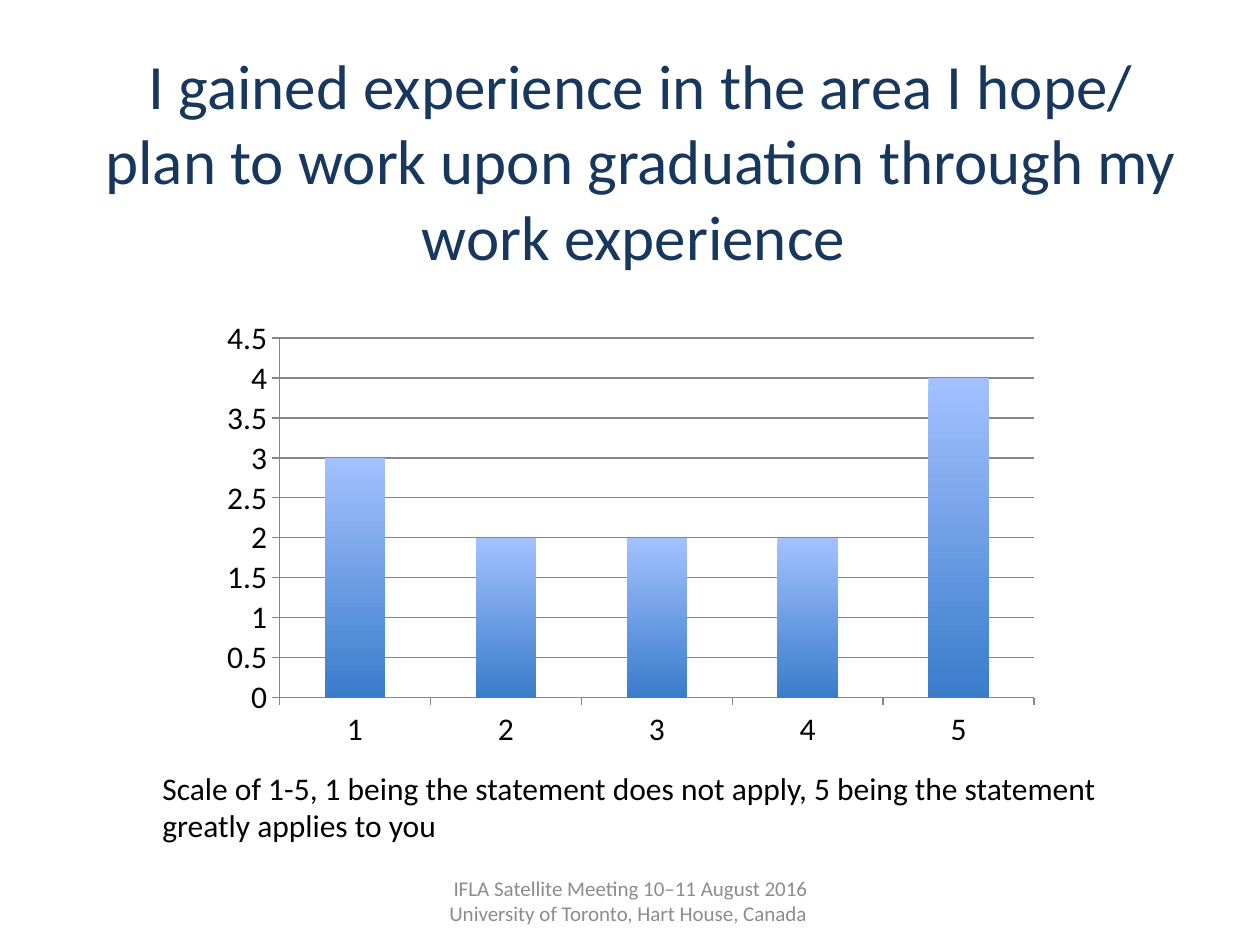
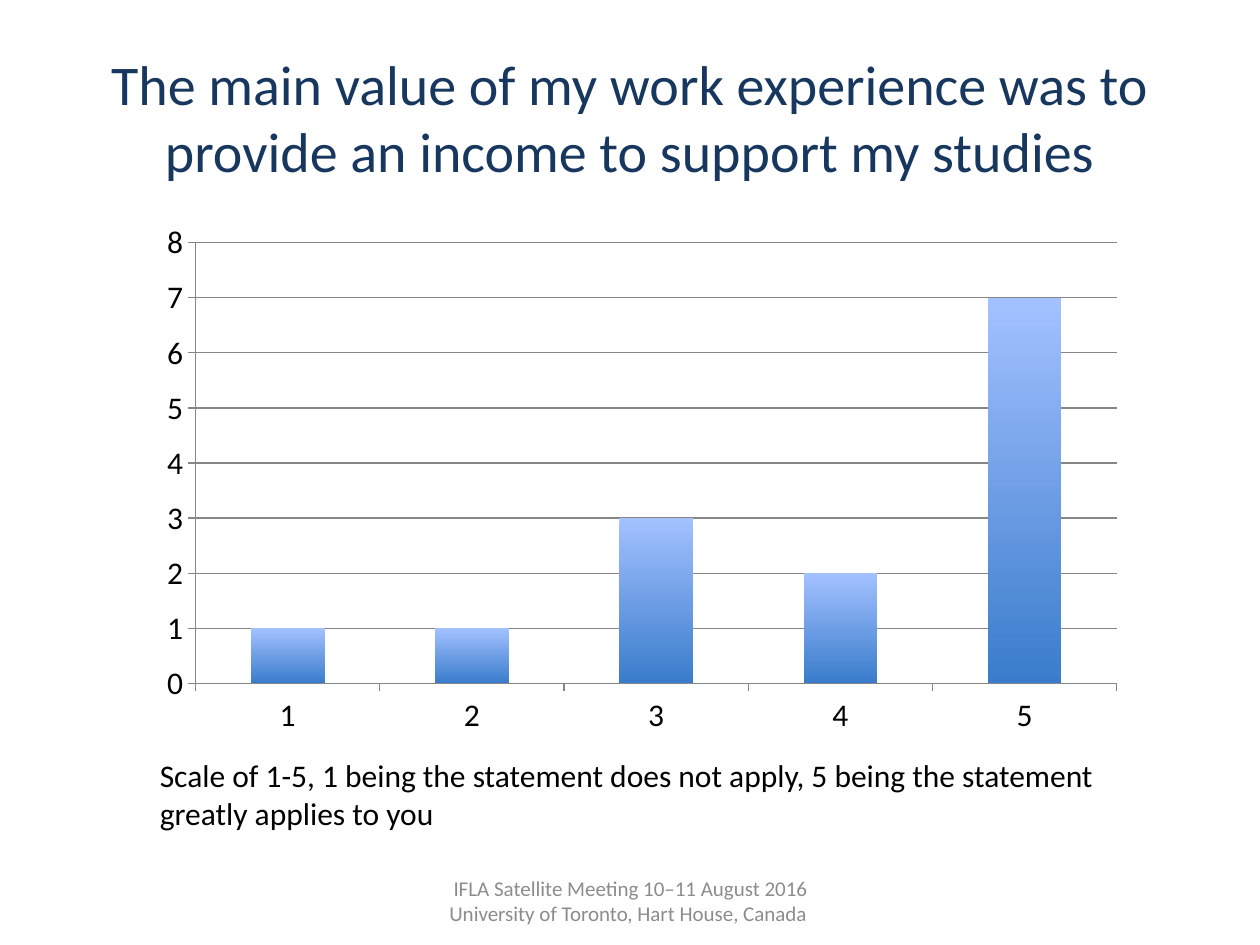
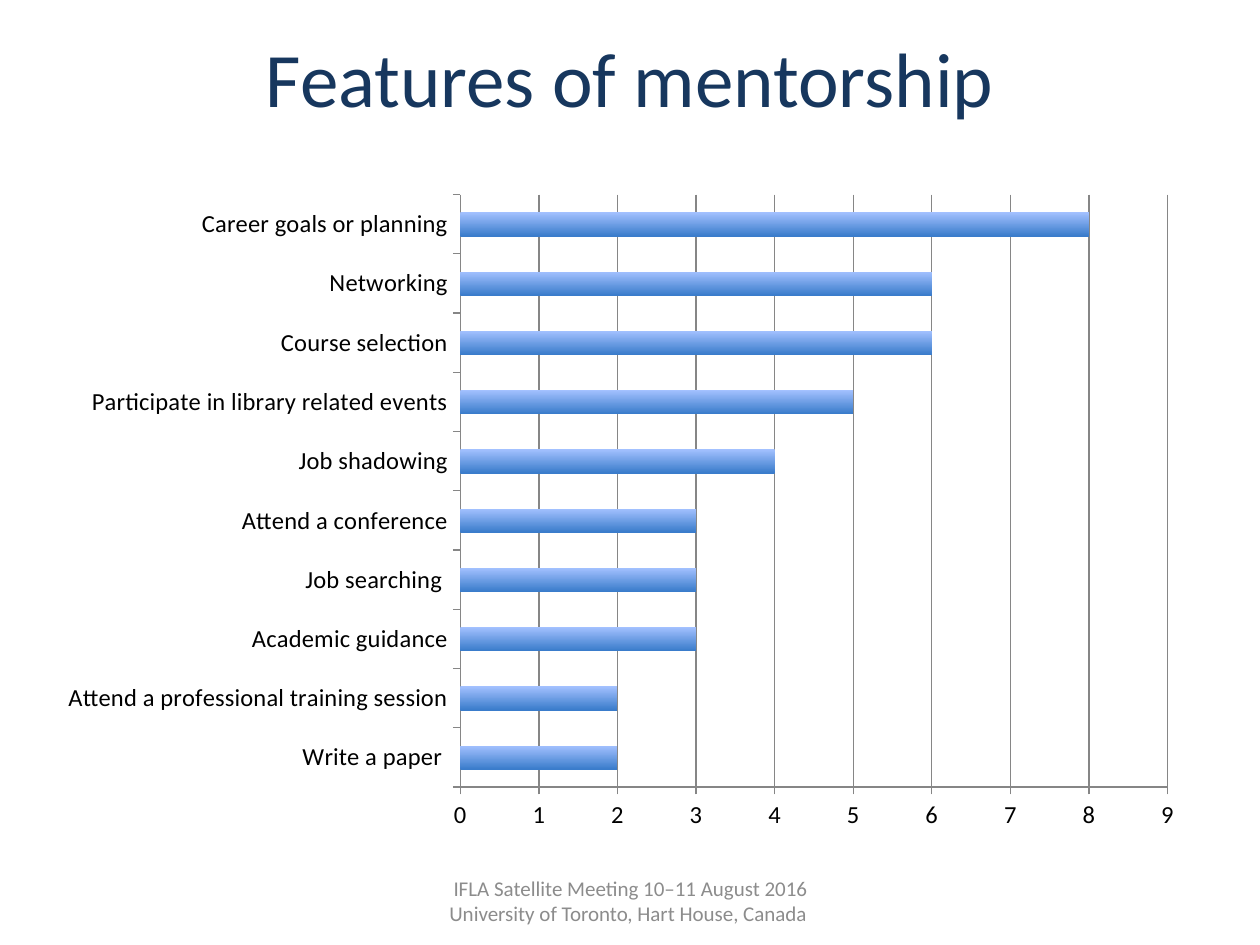
from dataclasses import dataclass

from pptx import Presentation
from pptx.chart.data import CategoryChartData
from pptx.dml.color import RGBColor
from pptx.enum import chart as kinds, text as words
from pptx.util import Inches, Pt

NAVY = RGBColor(0x17, 0x37, 0x5E)
GREY = RGBColor(0x8C, 0x8C, 0x8C)
BLACK = RGBColor(0, 0, 0)
RULE = RGBColor(0x86, 0x86, 0x86)
LIGHT = RGBColor(0xA3, 0xC1, 0xFF)
DEEP = RGBColor(0x3A, 0x7C, 0xCB)
FONT = "Calibri"

FOOTER = "IFLA Satellite Meeting 10–11 August 2016 University of Toronto, Hart House, Canada "
SCALE = ("Scale of 1-5, 1 being the statement does not apply, "
         "5 being the statement greatly applies to you")
COLUMN = kinds.XL_CHART_TYPE.COLUMN_CLUSTERED
BAR = kinds.XL_CHART_TYPE.BAR_CLUSTERED
Box = tuple[float, float, float, float]


@dataclass
class Style:
    size: int
    color: RGBColor
    align: words.PP_ALIGN = words.PP_ALIGN.CENTER
    anchor: words.MSO_ANCHOR = words.MSO_ANCHOR.MIDDLE


@dataclass
class Label:
    text: str
    box: Box
    style: Style


@dataclass
class Graph:
    kind: kinds.XL_CHART_TYPE
    box: Box
    data: dict[str, int]
    top: float
    step: float
    size: int = 18


@dataclass
class Page:
    graph: Graph
    labels: list[Label]


NOTE = Style(18, BLACK, words.PP_ALIGN.LEFT, words.MSO_ANCHOR.TOP)
FOOT = Label(FOOTER, (3.42, 6.95, 3.17, 0.4), Style(12, GREY))


def title(text: str, box: Box, size: int) -> Label:
    return Label(text, box, Style(size, NAVY))


def rate(*votes: int) -> dict[str, int]:
    return {str(mark): vote for mark, vote in enumerate(votes, 1)}


PAGES = [
    Page(
        Graph(COLUMN, (1.67, 2.46, 6.67, 3.55), rate(3, 2, 2, 2, 4), 4.5, 0.5),
        [title("I gained experience in the area I hope/ plan to work upon "
               "graduation through my work experience ", (0.67, 0.49, 8.83, 1.55), 36),
         Label(SCALE, (1.19, 6.05, 8.19, 0.71), NOTE)],
    ),
    Page(
        Graph(COLUMN, (1.17, 1.69, 7.85, 4.22), rate(1, 1, 3, 2, 7), 8, 1),
        [title("The main value of my work experience was to provide an income "
               "to support my studies", (0.5, 0.3, 9, 1.25), 32),
         Label(SCALE, (1.17, 5.95, 7.93, 0.71), NOTE)],
    ),
    Page(
        Graph(BAR, (0.36, 1.44, 9.14, 5.25), {
            "Write a paper ": 2,
            "Attend a professional training session": 2,
            "Academic guidance": 3,
            "Job searching ": 3,
            "Attend a conference": 3,
            "Job shadowing": 4,
            "Participate in library related events": 5,
            "Course selection": 6,
            "Networking": 6,
            "Career goals or planning": 8,
        }, 9, 1, 14),
        [title("Features of mentorship", (0.5, 0.3, 9, 0.61), 44)],
    ),
]


def put(item, traits: dict) -> None:
    for name, value in traits.items():
        setattr(item, name, value)


def write(slide, label: Label) -> None:
    style = label.style
    frame = slide.shapes.add_textbox(*map(Inches, label.box)).text_frame
    put(frame, {"word_wrap": True, "vertical_anchor": style.anchor})
    line = frame.paragraphs[0]
    line.alignment = style.align
    run = line.add_run()
    run.text = label.text
    put(run.font, {"name": FONT, "size": Pt(style.size)})
    run.font.color.rgb = style.color


def rule(line) -> None:
    line.color.rgb = RULE
    line.width = Pt(0.75)


def plot(slide, graph: Graph) -> None:
    data = CategoryChartData()
    data.categories = list(graph.data)
    data.add_series("Series 1", list(graph.data.values()))
    chart = slide.shapes.add_chart(graph.kind, *map(Inches, graph.box), data).chart
    put(chart, {"has_legend": False, "has_title": False})
    put(chart.font, {"name": FONT, "size": Pt(graph.size)})
    chart.font.color.rgb = BLACK

    for axis in (chart.category_axis, chart.value_axis):
        put(axis, {"major_tick_mark": kinds.XL_TICK_MARK.OUTSIDE,
                   "minor_tick_mark": kinds.XL_TICK_MARK.NONE})
        rule(axis.format.line)
    chart.category_axis.has_major_gridlines = False
    put(chart.value_axis, {"minimum_scale": 0, "maximum_scale": graph.top,
                           "major_unit": graph.step, "has_major_gridlines": True})
    rule(chart.value_axis.major_gridlines.format.line)

    group = chart.plots[0]
    put(group, {"gap_width": 150, "vary_by_categories": False})
    bars = group.series[0]
    bars.invert_if_negative = False
    fill = bars.format.fill
    fill.gradient()
    fill.gradient_angle = 270
    for stop, color in zip(fill.gradient_stops, (LIGHT, DEEP)):
        stop.color.rgb = color


def main() -> None:
    deck = Presentation()
    put(deck, {"slide_width": Inches(10), "slide_height": Inches(7.5)})
    for page in PAGES:
        slide = deck.slides.add_slide(deck.slide_layouts[6])
        plot(slide, page.graph)
        for label in [*page.labels, FOOT]:
            write(slide, label)
    deck.save("out.pptx")


if __name__ == "__main__":
    main()
